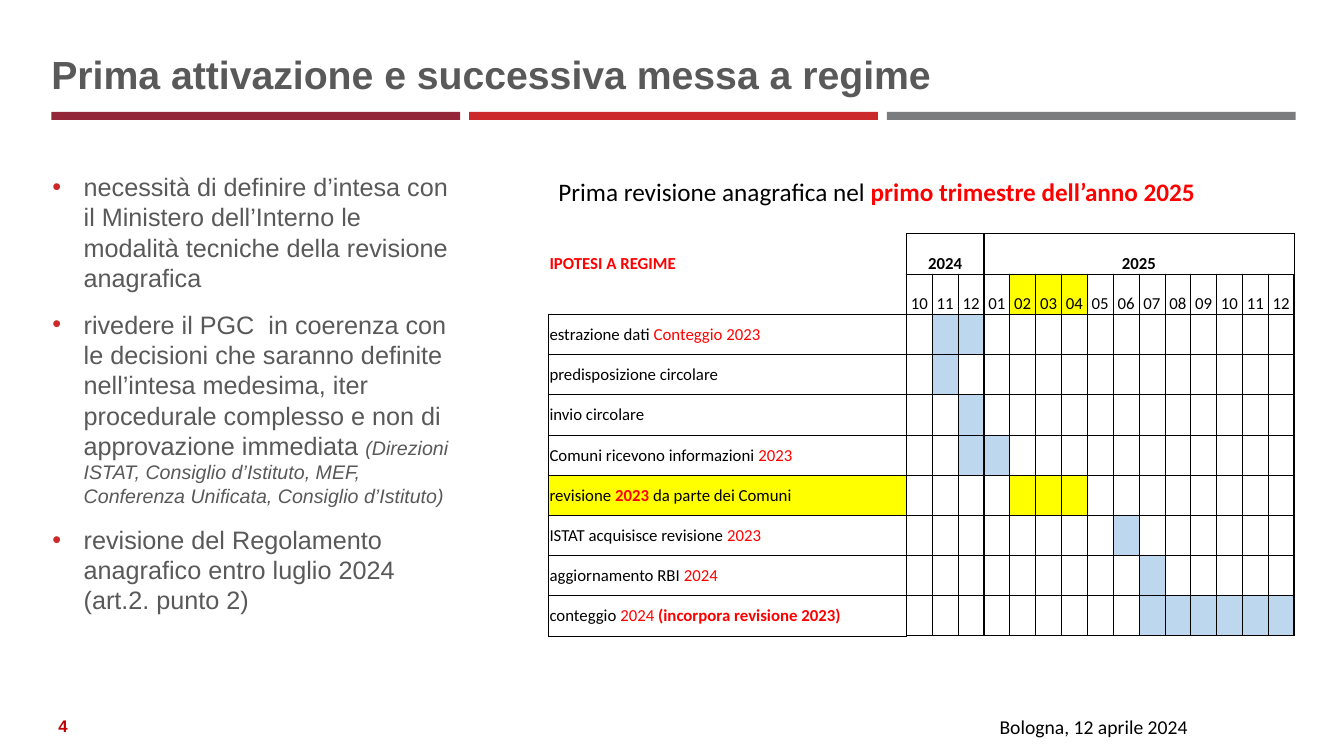
from lxml import etree
from pptx import Presentation
from pptx.dml.color import RGBColor
from pptx.enum import shapes, text
from pptx.oxml.ns import qn
from pptx.util import Inches, Pt

WINE = RGBColor(0x94, 0x26, 0x39)
BRICK = RGBColor(0xCC, 0x2A, 0x2A)
STEEL = RGBColor(0x7B, 0x7C, 0x7E)
GRAY = RGBColor(0x59, 0x59, 0x59)
BLACK = RGBColor(0, 0, 0)
RED = RGBColor(0xFF, 0, 0)
DARK = RGBColor(0xC0, 0, 0)
YELLOW = RGBColor(0xFF, 0xFF, 0)
BLUE = RGBColor(0xBD, 0xD7, 0xEE)

ALIGN = text.PP_ALIGN
ANCHOR = text.MSO_ANCHOR

BULLETS = [
    [("necessità di definire d’intesa con il Ministero dell’Interno le "
      "modalità tecniche della revisione anagrafica", 18, False)],
    [("rivedere il PGC  in coerenza con le decisioni che saranno definite "
      "nell’intesa medesima, iter procedurale complesso e non di "
      "approvazione immediata ", 18, False),
     ("(Direzioni ISTAT, Consiglio d’Istituto, MEF, Conferenza Unificata, "
      "Consiglio d’Istituto)", 14, True)],
    [("revisione del Regolamento anagrafico entro luglio 2024 "
      "(art.2. punto 2)", 18, False)],
]

# Years: label, first and last column
YEARS = [("2024", 1, 3), ("2025", 4, 15)]
MONTHS = [10, 11, 12, *range(1, 13)]

# Tasks: label runs (text, colour, bold), first and last column, bar colour
TASKS = [
    ([("estrazione dati", BLACK, False), (" Conteggio 2023", RED, False)],
     2, 3, BLUE),
    ([("predisposizione circolare", BLACK, False)], 2, 2, BLUE),
    ([("invio circolare", BLACK, False)], 3, 3, BLUE),
    ([("Comuni ricevono informazioni ", BLACK, False), ("2023", RED, False)],
     3, 4, BLUE),
    ([("revisione ", BLACK, False), ("2023 ", RED, True),
      ("da parte dei Comuni", BLACK, False)], 5, 7, YELLOW),
    ([("ISTAT acquisisce revisione ", BLACK, False), ("2023", RED, False)],
     9, 9, BLUE),
    ([("aggiornamento RBI ", BLACK, False), ("2024", RED, False)],
     10, 10, BLUE),
    ([("conteggio ", BLACK, False), ("2024 ", RED, False),
      ("(incorpora revisione 2023)", RED, True)], 10, 15, BLUE),
]


def add_run(para, words, size, color, bold=False, italic=False, face="Calibri"):
    run = para.add_run()
    run.text = words
    font = run.font
    font.name, font.size = face, Pt(size)
    font.bold, font.italic = bold, italic
    font.color.rgb = color


def add_box(slide, x, y, w, h, wrap=True):
    box = slide.shapes.add_textbox(Inches(x), Inches(y), Inches(w), Inches(h))
    box.text_frame.word_wrap = wrap
    return box.text_frame


def no_inset(frame):
    frame.margin_left = frame.margin_right = 0
    frame.margin_top = frame.margin_bottom = 0


def add_title(slide, x, y, w, h):
    title = slide.shapes.title
    title.left, title.top = Inches(x), Inches(y)
    title.width, title.height = Inches(w), Inches(h)
    frame = title.text_frame
    no_inset(frame)
    frame.word_wrap = True
    frame.auto_size = text.MSO_AUTO_SIZE.NONE
    frame.vertical_anchor = ANCHOR.BOTTOM
    para = frame.paragraphs[0]
    para.alignment = ALIGN.LEFT
    para.line_spacing = Pt(30)
    add_run(para, "Prima attivazione e successiva messa a regime", 28, GRAY,
            bold=True, face="Arial")


def add_rule(slide, x, y, w, h, gap=0.09):
    colors = (WINE, BRICK, STEEL)
    part = (w - gap * (len(colors) - 1)) / len(colors)
    for i, color in enumerate(colors):
        bar = slide.shapes.add_shape(
            shapes.MSO_SHAPE.RECTANGLE, Inches(x + i * (part + gap)),
            Inches(y), Inches(part), Inches(h))
        bar.shadow.inherit = False
        bar.fill.solid()
        bar.fill.fore_color.rgb = color
        bar.line.fill.background()


def add_bullets(slide, x, y, w, h):
    frame = add_box(slide, x, y, w, h)
    no_inset(frame)
    for i, runs in enumerate(BULLETS):
        para = frame.add_paragraph() if i else frame.paragraphs[0]
        para.space_after = Pt(12)
        props = para._p.get_or_add_pPr()
        props.set("marL", str(Inches(0.31)))
        props.set("indent", str(Inches(-0.31)))
        tint = etree.SubElement(props, qn("a:buClr"))
        etree.SubElement(tint, qn("a:srgbClr"), val=str(BRICK))
        etree.SubElement(props, qn("a:buFont"), typeface="Arial")
        etree.SubElement(props, qn("a:buChar"), char="•")
        for words, size, italic in runs:
            add_run(para, words, size, GRAY, italic=italic, face="Arial")


def set_edges(cell, **widths):
    """Draw each named side at its width in points; 0 leaves it blank."""
    props = cell._tc.get_or_add_tcPr()
    for i, side in enumerate("LRTB"):
        width = widths.get(side, 0.5)
        line = etree.Element(qn("a:ln" + side), w=str(Pt(width)))
        if width:
            fill = etree.SubElement(line, qn("a:solidFill"))
            etree.SubElement(fill, qn("a:srgbClr"), val=str(BLACK))
        else:
            etree.SubElement(line, qn("a:noFill"))
        props.insert(i, line)


def fill_cell(cell, color):
    cell.fill.solid()
    cell.fill.fore_color.rgb = color


def write_cell(cell, runs, align=ALIGN.LEFT):
    para = cell.text_frame.paragraphs[0]
    para.alignment = align
    for words, color, bold in runs:
        add_run(para, words, 12, color, bold)


def add_plan(slide, x, y, w, h, label=3.55):
    rows, cols = len(TASKS) + 2, len(MONTHS) + 1
    frame = slide.shapes.add_table(rows, cols, Inches(x), Inches(y),
                                   Inches(w), Inches(h))
    table = frame.table
    table.first_row = table.horz_banding = False
    for c, col in enumerate(table.columns):
        col.width = Inches((w - label) / len(MONTHS) if c else label)
    for row in table.rows:
        row.height = Inches(h / rows)

    # Plain grid, heavier around each year
    starts = [first for _, first, _ in YEARS]
    ends = [last for _, _, last in YEARS]
    for r in range(rows):
        for c in range(cols):
            cell = table.cell(r, c)
            cell.margin_left = cell.margin_right = Inches(0.01)
            cell.margin_top, cell.margin_bottom = Inches(0.01), 0
            cell.vertical_anchor = ANCHOR.BOTTOM if r < 2 else ANCHOR.MIDDLE
            cell.fill.background()
            if c == 0 and r < 2:
                set_edges(cell, L=0, T=0, R=1, B=0.5 * r)
            else:
                set_edges(cell, L=1 if c in starts else 0.5,
                          R=1 if c == 0 or c in ends else 0.5,
                          T=1 if r == 0 else 0.5,
                          B=1 if c and r == rows - 1 else 0.5)

    # Header rows
    write_cell(table.cell(0, 0), [("IPOTESI A REGIME", RED, True)])
    for year, first, last in YEARS:
        table.cell(0, first).merge(table.cell(0, last))
        write_cell(table.cell(0, first), [(year, BLACK, True)], ALIGN.CENTER)
    for c, month in enumerate(MONTHS, 1):
        write_cell(table.cell(1, c), [(f"{month:02d}", BLACK, False)],
                   ALIGN.CENTER)

    # Task rows; the yellow task also marks its label and months
    for r, (runs, first, last, color) in enumerate(TASKS, 2):
        write_cell(table.cell(r, 0), runs)
        span = range(first, last + 1)
        marks = [(r, c) for c in span]
        if color == YELLOW:
            marks += [(r, 0)] + [(1, c) for c in span]
        for spot in marks:
            fill_cell(table.cell(*spot), color)


def add_lead(slide, x, y, w, h):
    para = add_box(slide, x, y, w, h, wrap=False).paragraphs[0]
    add_run(para, "Prima revisione anagrafica nel ", 18, BLACK)
    add_run(para, "primo trimestre dell’anno 2025", 18, RED, bold=True)


def add_foot(slide, x, y, w, h):
    # Page number at the left, place and date at the right
    frame = add_box(slide, x, y, 0.55, h)
    frame.vertical_anchor = ANCHOR.MIDDLE
    para = frame.paragraphs[0]
    para.alignment = ALIGN.CENTER
    add_run(para, "4", 12, DARK, bold=True, face="Arial")
    para = add_box(slide, x + w - 6.82, y + 0.04, 6.82, 0.34).paragraphs[0]
    para.alignment = ALIGN.RIGHT
    add_run(para, "Bologna, 12 aprile 2024", 14, BLACK)


def main():
    deck = Presentation()
    deck.slide_width, deck.slide_height = Inches(13.33), Inches(7.5)
    slide = deck.slides.add_slide(deck.slide_layouts[5])
    add_rule(slide, 0.51, 1.11, 12.34, 0.08)
    add_title(slide, 0.51, 0.55, 12.32, 0.42)
    add_bullets(slide, 0.52, 1.7, 4.01, 4.89)
    add_lead(slide, 5.44, 1.7, 6.95, 0.4)
    add_plan(slide, 5.44, 2.32, 7.4, 3.99)
    add_foot(slide, 0.35, 7, 11.53, 0.4)
    deck.save("out.pptx")


if __name__ == "__main__":
    main()
